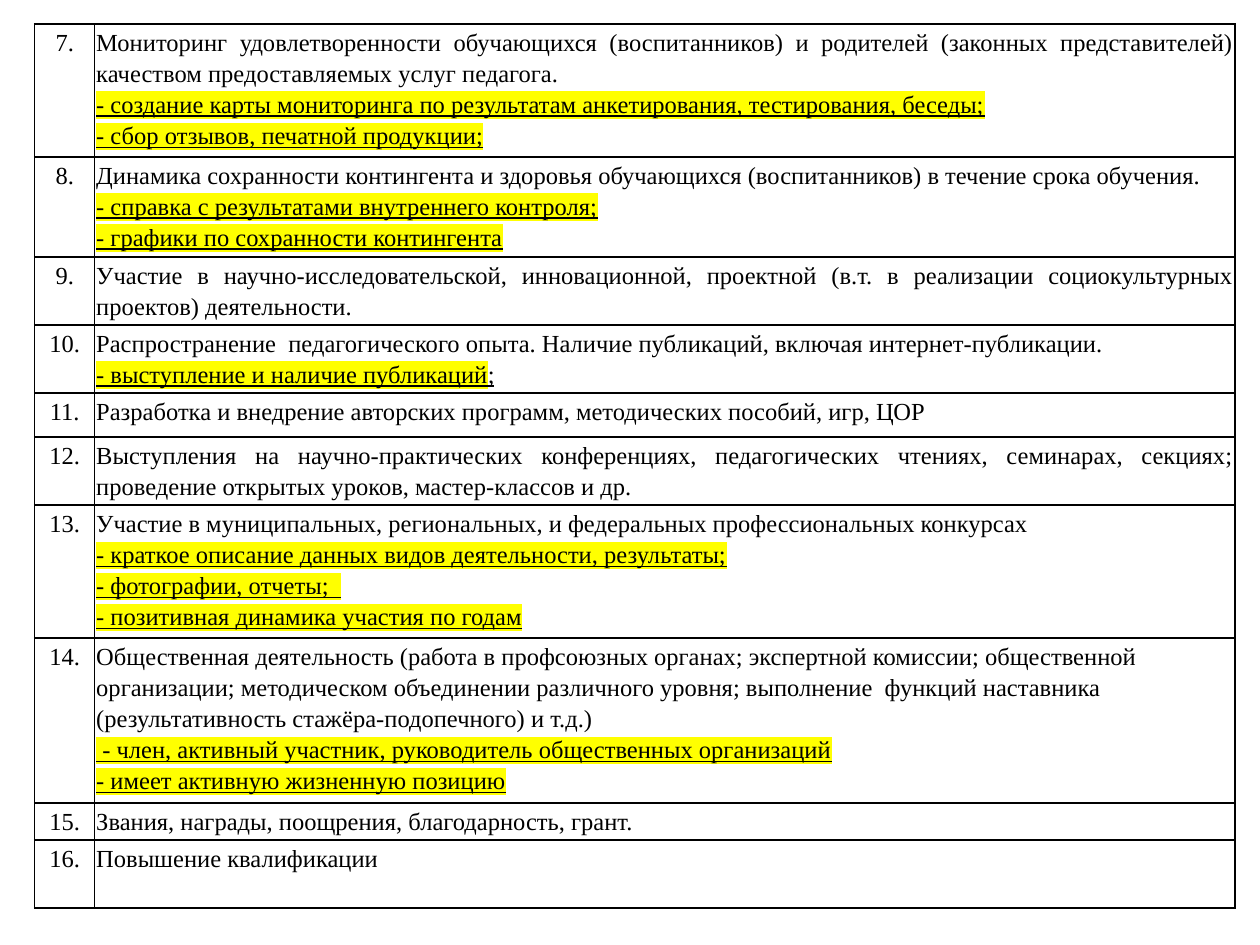
import dataclasses

import pptx
import pptx.dml.color
import pptx.enum.text
import pptx.oxml
import pptx.oxml.ns
import pptx.util

Cm = pptx.util.Cm
Align = pptx.enum.text.PP_ALIGN


@dataclasses.dataclass(frozen=True)
class Theme:
    font: str = "Times New Roman"
    size: int = 14
    ink: str = "000000"
    marker: str = "FFFF00"
    line_spacing: float = 1.15
    border: int = 1
    inset: float = 0.03


@dataclasses.dataclass(frozen=True)
class Criterion:
    height: float
    text: str
    evidence: tuple = ()
    align: Align = Align.JUSTIFY
    ending: str = ""


THEME = Theme()
FIRST_NUMBER = 7
COLUMN_WIDTHS = (1.21, 22.99)
CRITERIA = (
    Criterion(
        2.68,
        "Мониторинг удовлетворенности обучающихся (воспитанников) и родителей "
        "(законных представителей) качеством предоставляемых услуг педагога.",
        ("- создание карты мониторинга по результатам анкетирования, тестирования, беседы;",
         "- сбор отзывов, печатной продукции;"),
    ),
    Criterion(
        2.02,
        "Динамика сохранности контингента и здоровья обучающихся (воспитанников) "
        "в течение срока обучения.",
        ("- справка с результатами внутреннего контроля;",
         "- графики по сохранности контингента"),
        Align.LEFT,
    ),
    Criterion(
        1.37,
        "Участие в научно-исследовательской, инновационной, проектной "
        "(в.т. в реализации социокультурных проектов) деятельности.",
    ),
    Criterion(
        1.37,
        "Распространение  педагогического опыта. Наличие публикаций, "
        "включая интернет-публикации. ",
        ("- выступление и наличие публикаций",),
        ending=";",
    ),
    Criterion(0.89, "Разработка и внедрение авторских программ, методических пособий, игр, ЦОР"),
    Criterion(
        1.37,
        "Выступления на научно-практических конференциях, педагогических чтениях, "
        "семинарах, секциях; проведение открытых уроков, мастер-классов и др.",
    ),
    Criterion(
        2.68,
        "Участие в муниципальных, региональных, и федеральных профессиональных конкурсах",
        ("- краткое описание данных видов деятельности, результаты;",
         "- фотографии, отчеты;  ",
         "- позитивная динамика участия по годам"),
    ),
    Criterion(
        3.33,
        "Общественная деятельность (работа в профсоюзных органах; экспертной комиссии; "
        "общественной организации; методическом объединении различного уровня; "
        "выполнение  функций наставника (результативность стажёра-подопечного) и т.д.)",
        (" - член, активный участник, руководитель общественных организаций",
         "- имеет активную жизненную позицию"),
        Align.LEFT,
    ),
    Criterion(0.74, "Звания, награды, поощрения, благодарность, грант."),
    Criterion(1.37, "Повышение квалификации"),
)


def add_span(para, text, underline=False, marker=None):
    span = para.add_run()
    span.text = text
    font = span.font
    font.name = THEME.font
    font.size = pptx.util.Pt(THEME.size)
    font.color.rgb = pptx.dml.color.RGBColor.from_string(THEME.ink)
    if underline:
        font.underline = True
    if marker:
        highlight = pptx.oxml.parse_xml(
            f'<a:highlight {pptx.oxml.ns.nsdecls("a")}><a:srgbClr val="{marker}"/></a:highlight>'
        )
        fill = span._r.rPr.find(pptx.oxml.ns.qn("a:solidFill"))
        fill.addnext(highlight)


def add_para(cell, text, align=Align.LEFT, ending="", new=True, **span_format):
    frame = cell.text_frame
    para = frame.add_paragraph() if new else frame.paragraphs[0]
    para.alignment = align
    para.line_spacing = THEME.line_spacing
    add_span(para, text, **span_format)
    if ending:
        add_span(para, ending, underline=True)


def style_cell(cell):
    cell.margin_left = cell.margin_right = Cm(THEME.inset)
    cell.margin_top = cell.margin_bottom = Cm(THEME.inset)
    cell.fill.background()
    properties = cell._tc.get_or_add_tcPr()
    width = pptx.util.Pt(THEME.border)
    for position, side in enumerate(("lnL", "lnR", "lnT", "lnB")):
        properties.insert(position, pptx.oxml.parse_xml(
            f'<a:{side} {pptx.oxml.ns.nsdecls("a")} w="{width}">'
            f'<a:solidFill><a:srgbClr val="{THEME.ink}"/></a:solidFill></a:{side}>'
        ))


def fill_row(number_cell, text_cell, number, criterion):
    for cell in (number_cell, text_cell):
        style_cell(cell)
    add_para(number_cell, f"{number}.", align=Align.CENTER, new=False)
    add_para(text_cell, criterion.text, align=criterion.align, new=False)
    for evidence in criterion.evidence:
        add_para(text_cell, evidence, align=criterion.align, ending=criterion.ending,
                 underline=True, marker=THEME.marker)


def add_criteria_table(page, left, top):
    width = sum(COLUMN_WIDTHS)
    height = sum(criterion.height for criterion in CRITERIA)
    table = page.shapes.add_table(
        len(CRITERIA), len(COLUMN_WIDTHS), Cm(left), Cm(top), Cm(width), Cm(height)
    ).table
    table.first_row = table.horz_banding = False
    for column, column_width in zip(table.columns, COLUMN_WIDTHS):
        column.width = Cm(column_width)
    for index, (row, criterion) in enumerate(zip(table.rows, CRITERIA)):
        row.height = Cm(criterion.height)
        fill_row(*row.cells, FIRST_NUMBER + index, criterion)


def main():
    deck = pptx.Presentation()
    deck.slide_width, deck.slide_height = Cm(25.4), Cm(19.05)
    page = deck.slides.add_slide(deck.slide_layouts[6])
    add_criteria_table(page, left=0.7, top=0.48)
    deck.save("out.pptx")


if __name__ == "__main__":
    main()
